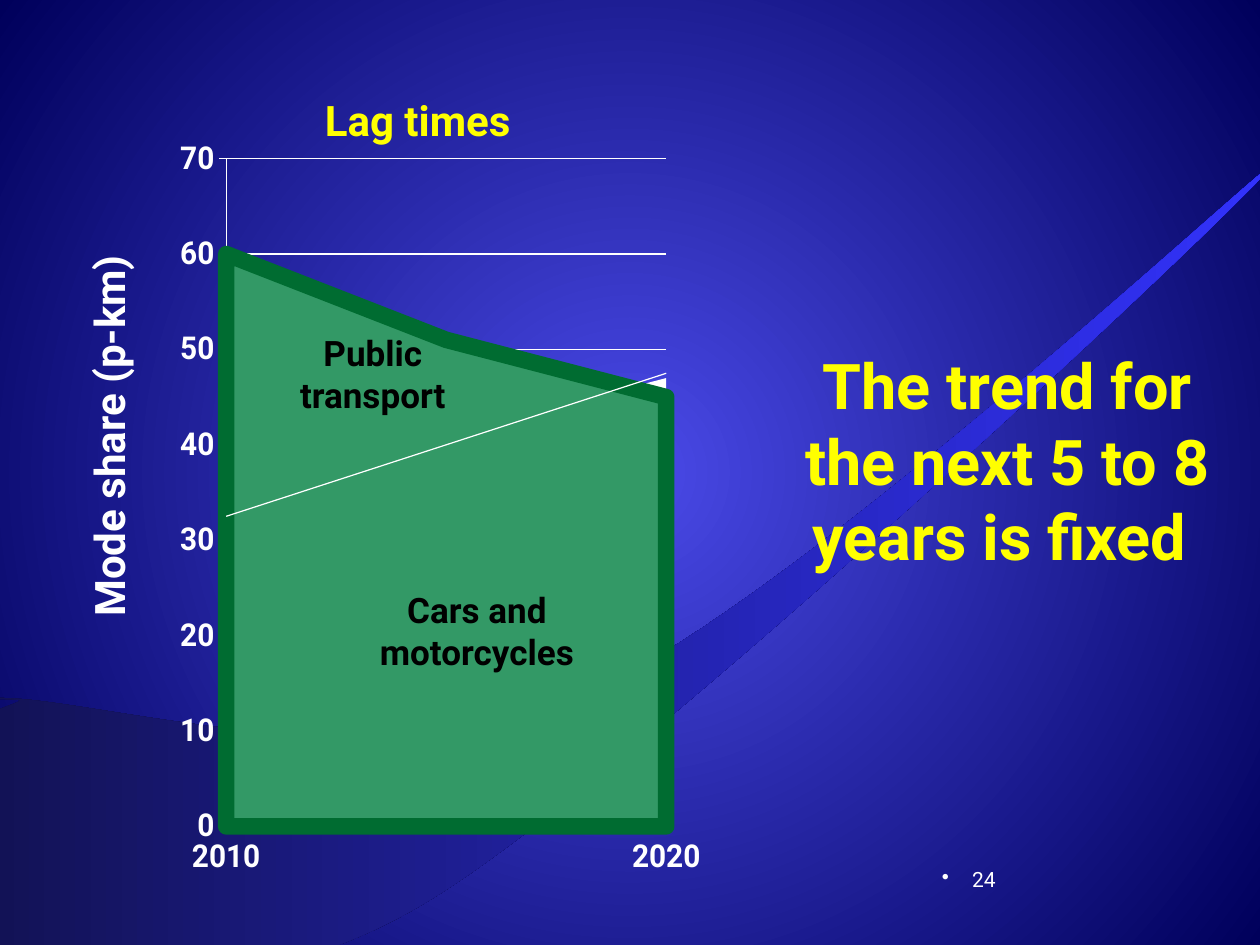
from collections import namedtuple
from dataclasses import dataclass

from pptx import Presentation
from pptx import oxml
from pptx import util as u
from pptx.chart import data
from pptx.dml import color
from pptx.enum import chart as charts
from pptx.enum import text
from pptx.oxml import ns

Box = namedtuple("Box", "left top width height")


@dataclass(frozen=True)
class Theme:
    """Colours, font and type sizes of the deck."""

    font: str = "Roboto"
    centre: str = "4A4AE9"
    edge: str = "00005B"
    wave_dark: str = "10104A"
    wave_light: str = "3333FF"
    accent: str = "FFFF00"
    light: str = "FFFFFF"
    dark: str = "000000"
    area: str = "339966"
    outline: str = "006C31"
    number_size: int = 12
    axis_size: int = 18
    label_size: int = 20
    title_size: int = 24
    message_size: int = 36


THEME = Theme()

WAVE_START = (-0.03, 7.6)
WAVE_CURVES = [
    [(0.55, 7.53), (1.76, 8.17), (3.45, 7.12)],
    [(5.13, 6.08), (9.89, 1.6), (10.08, 1.33)],
    [(10.28, 1.07), (6.29, 4.83), (4.61, 5.53)],
    [(2.93, 6.23), (0.73, 5.53), (-0.01, 5.54)],
    [(-0.75, 5.55), (0.17, 5.54), (0.16, 5.56)],
    [(0.16, 5.57), (0.01, 5.62), (-0.03, 5.64)],
]


def rgb(value):
    """Return a colour from its hex value."""
    return color.RGBColor.from_string(value)


def inches(values):
    """Convert a run of numbers to lengths."""
    return [u.Inches(value) for value in values]


def xml(tag, body="", attributes=""):
    """Build one element in the drawing or chart namespace."""
    return oxml.parse_xml(
        f'<{tag} {ns.nsdecls("a", "c")} {attributes}>{body}</{tag}>')


def style_font(font, size, hue, bold=True):
    """Set the family, size, colour and weight of a font."""
    font.name = THEME.font
    font.size = u.Pt(size)
    font.bold = bold
    font.color.rgb = rgb(hue)


def write(box, words, size, hue, bold=True, align=text.PP_ALIGN.CENTER):
    """Write one styled paragraph into a shape."""
    para = box.text_frame.paragraphs[0]
    para.alignment = align
    span = para.add_run()
    span.text = words
    style_font(span.font, size, hue, bold)
    return para


def add_text(page, place, words, size, hue, wrap=True, **style):
    """Add a text box and return it with its paragraph."""
    box = page.shapes.add_textbox(*inches(place))
    box.text_frame.word_wrap = wrap
    return box, write(box, words, size, hue, **style)


def set_gradient(fill, first, last):
    """Give a fill a two-colour gradient."""
    fill.gradient()
    for stop, hue in zip(fill.gradient_stops, (first, last)):
        stop.color.rgb = rgb(hue)


def paint_background(page):
    """Fill the page with a glow that darkens from the centre."""
    set_gradient(page.background.fill, THEME.centre, THEME.edge)
    line = page.element.find(".//" + ns.qn("a:lin"))
    target = '<a:fillToRect l="50000" t="50000" r="50000" b="50000"/>'
    line.getparent().replace(line, xml("a:path", target, 'path="circle"'))


def bend_segments(shape, count):
    """Turn each three straight segments of an outline into a cubic curve."""
    segments = list(shape.element.iter(ns.qn("a:lnTo")))
    for first in range(0, 3 * count, 3):
        curve = xml("a:cubicBezTo")
        segments[first].addprevious(curve)
        for segment in segments[first:first + 3]:
            curve.append(segment[0])
            segment.getparent().remove(segment)


def add_wave(page, place):
    """Sweep a ribbon across the page behind everything else."""
    corners = [WAVE_START] + [point for curve in WAVE_CURVES for point in curve]
    points = [inches((place.left + x, place.top + y)) for x, y in corners]
    builder = page.shapes.build_freeform(*points[0], scale=1.0)
    builder.add_line_segments(points[1:], close=True)
    wave = builder.convert_to_shape()
    bend_segments(wave, len(WAVE_CURVES))
    wave.shadow.inherit = False
    set_gradient(wave.fill, THEME.wave_dark, THEME.wave_light)
    wave.fill.gradient_angle = 0
    wave.line.fill.background()
    page.shapes.element.insert(2, wave.element)


def add_title(page, place):
    """Place the title above the chart."""
    title = page.shapes.title
    title.left, title.top, title.width, title.height = inches(place)
    title.text_frame.vertical_anchor = text.MSO_ANCHOR.BOTTOM
    write(title, "Lag times", THEME.title_size, THEME.accent)


def style_axis(axis):
    """Give an axis a white line and bold labels."""
    axis.format.line.color.rgb = rgb(THEME.light)
    axis.format.line.width = u.Pt(0.75)
    axis.major_tick_mark = charts.XL_TICK_MARK.OUTSIDE
    style_font(axis.tick_labels.font, THEME.axis_size, THEME.light)


def add_trend_line(series):
    """Add a thin linear trend to a series."""
    trend = xml("c:trendline", (
        '<c:spPr><a:ln w="9525"><a:solidFill>'
        f'<a:srgbClr val="{THEME.light}"/></a:solidFill></a:ln></c:spPr>'
        '<c:trendlineType val="linear"/>'
        '<c:dispRSqr val="0"/><c:dispEq val="0"/>'))
    series._element.find(ns.qn("c:cat")).addprevious(trend)


def set_plot_layout(chart, place, plot):
    """Fix the inner plot area, given in inches within the chart."""
    shares = (plot.left / place.width, plot.top / place.height,
              plot.width / place.width, plot.height / place.height)
    modes = "".join(f'<c:{key}Mode val="edge"/>' for key in "xy")
    sizes = "".join(f'<c:{key} val="{share:.4f}"/>'
                    for key, share in zip("xywh", shares))
    layout = xml("c:layout", '<c:manualLayout><c:layoutTarget val="inner"/>'
                 f'{modes}{sizes}</c:manualLayout>')
    plot_area = chart.element.find(".//" + ns.qn("c:plotArea"))
    for old in plot_area.findall(ns.qn("c:layout")):
        plot_area.remove(old)
    plot_area.insert(0, layout)


def add_area_chart(page, place):
    """Add the mode share chart."""
    values = data.CategoryChartData()
    values.categories = ["2010", "", "2020"]
    values.add_series("Series 1", (60, 51, 45))
    values.add_series("Series 2", (32, 41, 47))
    chart = page.shapes.add_chart(
        charts.XL_CHART_TYPE.AREA, *inches(place), values).chart
    chart.has_legend = chart.has_title = False
    style_font(chart.font, THEME.axis_size, THEME.light)
    chart.plots[0].vary_by_categories = False

    public, cars = chart.plots[0].series
    for series, hue in ((public, THEME.area), (cars, THEME.light)):
        series.format.fill.solid()
        series.format.fill.fore_color.rgb = rgb(hue)
    public.format.line.color.rgb = rgb(THEME.outline)
    public.format.line.width = u.Pt(10)
    cars.format.line.fill.background()
    add_trend_line(cars)

    scale = chart.value_axis
    scale.minimum_scale, scale.maximum_scale, scale.major_unit = 0, 70, 10
    scale.has_major_gridlines = True
    scale.major_gridlines.format.line.color.rgb = rgb(THEME.light)
    scale.major_gridlines.format.line.width = u.Pt(0.75)
    for axis in (scale, chart.category_axis):
        style_axis(axis)
    chart.element.find(".//" + ns.qn("c:crossBetween")).set("val", "midCat")
    set_plot_layout(chart, place, Box(0.24, 0.15, 3.69, 5.3))


def add_chart_labels(page, place):
    """Name the areas and the value axis, relative to the chart."""
    for x, y, width, words in ((0.7, 1.47, 1.66, "Public transport"),
                               (1.38, 3.51, 1.95, "Cars and motorcycles")):
        add_text(page, Box(place.left + x, place.top + y, width, 0.77),
                 words, THEME.label_size, THEME.dark)
    spot = Box(place.left - 2.29, place.top + 2.1, 3.44, 0.5)
    label, _ = add_text(page, spot, "Mode share (p-km)", THEME.title_size,
                        THEME.light, wrap=False)
    label.rotation = 270


def add_page_number(page, place):
    """Add the bulleted page number."""
    _, para = add_text(page, place, "24", THEME.number_size, THEME.light,
                       bold=False, align=text.PP_ALIGN.RIGHT)
    settings = para._p.get_or_add_pPr()
    settings.set("marL", str(u.Inches(0.24)))
    settings.set("indent", str(u.Inches(-0.24)))
    settings.append(xml("a:buChar", attributes='char="•"'))


def main():
    """Build and save the deck."""
    deck = Presentation()
    deck.slide_width, deck.slide_height = inches((10, 7.5))
    page = deck.slides.add_slide(deck.slide_layouts[5])
    chart_place = Box(1.43, 1.11, 4.13, 5.92)
    paint_background(page)
    add_wave(page, Box(0, 0, 10, 7.5))
    add_title(page, Box(0.46, 0.58, 5.71, 0.62))
    add_page_number(page, Box(6.75, 6.83, 1.25, 0.5))
    add_area_chart(page, chart_place)
    add_chart_labels(page, chart_place)
    add_text(page, Box(6.15, 2.7, 3.69, 2.52),
             "The trend for the next 5 to 8 years is fixed ",
             THEME.message_size, THEME.accent)
    deck.save("out.pptx")


if __name__ == "__main__":
    main()
